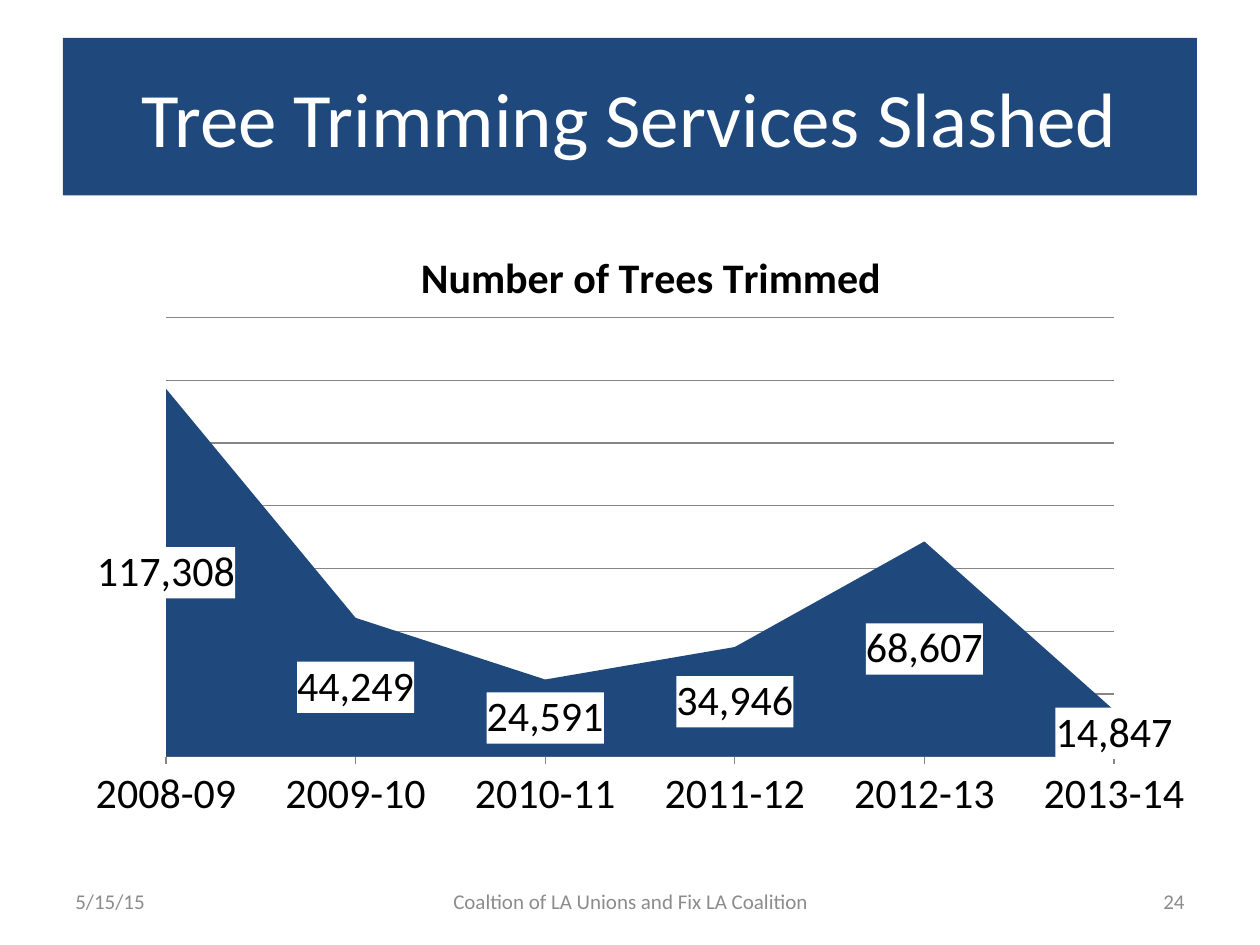
from dataclasses import dataclass

from lxml.etree import SubElement
from pptx import Presentation
from pptx.chart.data import CategoryChartData
from pptx.dml.color import RGBColor
from pptx.enum.chart import XL_CHART_TYPE, XL_TICK_MARK
from pptx.enum.shapes import MSO_SHAPE
from pptx.enum.text import MSO_ANCHOR, PP_ALIGN
from pptx.oxml import parse_xml
from pptx.oxml.ns import nsdecls, qn
from pptx.util import Inches, Pt

COLORS = {
    "navy": "1F497D",
    "white": "FFFFFF",
    "black": "000000",
    "footer": "8C8C8C",
    "grid": "868686",
}
TREES_TRIMMED = {
    "2008-09": 117308,
    "2009-10": 44249,
    "2010-11": 24591,
    "2011-12": 34946,
    "2012-13": 68607,
    "2013-14": 14847,
}
CHART_TITLE = "Number of Trees Trimmed"
NUMBER_FORMAT = "#,##0"


@dataclass(frozen=True)
class Label:
    text: str
    left: float
    top: float
    width: float
    height: float
    size: int
    color: str
    align: PP_ALIGN
    fill: str | None = None


LABELS = [
    Label("Tree Trimming Services Slashed", 0.5, 0.3, 9, 1.25, 44, "white", PP_ALIGN.CENTER, "navy"),
    Label("5/15/15", 0.5, 6.95, 2.33, 0.4, 12, "footer", PP_ALIGN.LEFT),
    Label("24", 7.17, 6.95, 2.33, 0.4, 12, "footer", PP_ALIGN.RIGHT),
    Label("Coaltion of LA Unions and Fix LA Coalition", 3.42, 6.95, 3.17, 0.4, 12, "footer", PP_ALIGN.CENTER),
]


def rgb(name: str) -> RGBColor:
    return RGBColor.from_string(COLORS[name])


def apply_format(target, values: dict) -> None:
    for name, value in values.items():
        setattr(target, name, value)


def style_font(font, size: int, color: str = "black", bold: bool = False) -> None:
    apply_format(font, {"name": "Calibri", "size": Pt(size), "bold": bold})
    font.color.rgb = rgb(color)


def draw_label(page, label: Label) -> None:
    place = [Inches(n) for n in (label.left, label.top, label.width, label.height)]
    if label.fill:
        box = page.shapes.add_shape(MSO_SHAPE.RECTANGLE, *place)
        box.shadow.inherit = False
        box.fill.solid()
        box.fill.fore_color.rgb = rgb(label.fill)
        box.line.fill.background()
    else:
        box = page.shapes.add_textbox(*place)
    apply_format(box.text_frame, {"word_wrap": True, "vertical_anchor": MSO_ANCHOR.MIDDLE})
    para = box.text_frame.paragraphs[0]
    para.alignment = label.align
    span = para.add_run()
    span.text = label.text
    style_font(span.font, label.size, label.color)


def place_part(parent, **values) -> None:
    layout = parent.find(qn("c:layout"))
    if layout is None:
        layout = parse_xml(f"<c:layout {nsdecls('c')}/>")
        parent.insert(0, layout)
    for child in list(layout):
        layout.remove(child)
    manual = SubElement(layout, qn("c:manualLayout"))
    for name, value in values.items():
        SubElement(manual, qn(f"c:{name}")).set("val", str(value))


def draw_chart(page) -> None:
    data = CategoryChartData(number_format=NUMBER_FORMAT)
    data.categories = list(TREES_TRIMMED)
    data.add_series(CHART_TITLE, list(TREES_TRIMMED.values()))
    place = [Inches(n) for n in (0.58, 1.67, 9, 4.95)]
    chart = page.shapes.add_chart(XL_CHART_TYPE.AREA, *place, data).chart
    style_font(chart.font, 10)
    apply_format(chart, {"has_legend": False, "has_title": True})
    frame = chart.chart_title.text_frame
    frame.text = CHART_TITLE
    style_font(frame.paragraphs[0].runs[0].font, 24, bold=True)

    category_axis, value_axis = chart.category_axis, chart.value_axis
    apply_format(category_axis, {
        "major_tick_mark": XL_TICK_MARK.OUTSIDE,
        "minor_tick_mark": XL_TICK_MARK.NONE,
        "has_major_gridlines": False,
    })
    style_font(category_axis.tick_labels.font, 24)
    apply_format(value_axis, {
        "minimum_scale": 0,
        "maximum_scale": 140000,
        "major_unit": 20000,
        "has_major_gridlines": True,
        "visible": False,
    })
    for line in (category_axis.format.line, value_axis.major_gridlines.format.line):
        line.width = Pt(0.75)
        line.color.rgb = rgb("grid")
    for crossing in chart._chartSpace.iter(qn("c:crossBetween")):
        crossing.set("val", "midCat")

    series = chart.plots[0].series[0]
    series.format.fill.solid()
    series.format.fill.fore_color.rgb = rgb("navy")
    labels = series.data_labels
    apply_format(labels, {
        "show_value": True,
        "number_format": NUMBER_FORMAT,
        "number_format_is_linked": False,
    })
    style_font(labels.font, 24)
    labels._element.find(qn("c:txPr")).addprevious(parse_xml(
        f"<c:spPr {nsdecls('c', 'a')}><a:solidFill>"
        f"<a:srgbClr val='{COLORS['white']}'/></a:solidFill></c:spPr>"
    ))
    place_part(chart.chart_title._element, xMode="edge", yMode="edge", x=0.3, y=0.05)
    place_part(
        chart._chartSpace.chart.plotArea,
        layoutTarget="inner", xMode="edge", yMode="edge", x=0.082, y=0.172, w=0.836, h=0.704,
    )


def main() -> None:
    """Build the tree trimming slide and save it."""
    deck = Presentation()
    apply_format(deck, {"slide_width": Inches(10), "slide_height": Inches(7.5)})
    page = deck.slides.add_slide(deck.slide_layouts[6])
    for label in LABELS:
        draw_label(page, label)
    draw_chart(page)
    deck.save("out.pptx")


if __name__ == "__main__":
    main()
